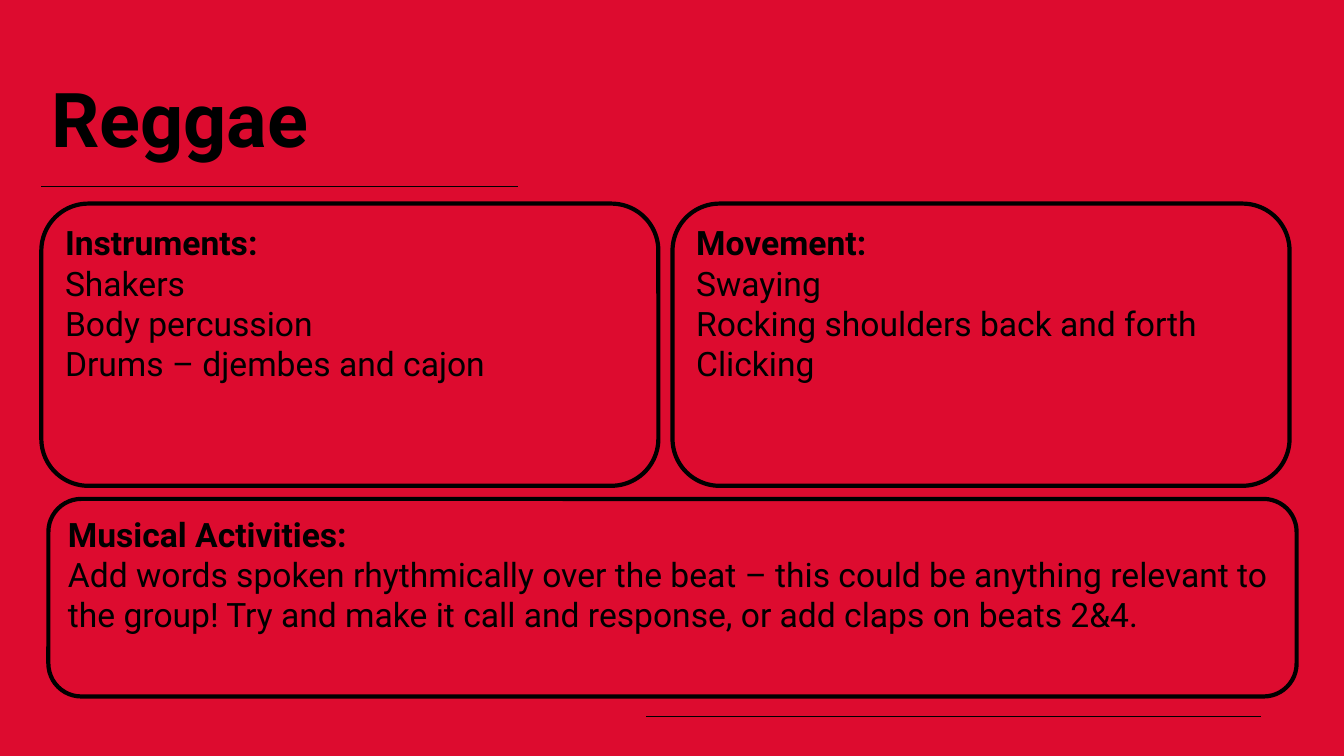
import pptx
import pptx.util
import pptx.dml.color
import pptx.enum.shapes
import pptx.enum.text
import pptx.oxml

Inches = pptx.util.Inches
COLORS = {"back": "DD0B2F", "ink": "000000"}
ANCHOR = pptx.enum.text.MSO_ANCHOR.TOP
LEFT = pptx.enum.text.PP_ALIGN.LEFT


def tint(name):
    return pptx.dml.color.RGBColor.from_string(COLORS[name])


def style(para, size, bold):
    look = {"name": "Roboto", "size": pptx.util.Pt(size), "bold": bold}
    para.alignment = LEFT
    for run in para.runs:
        for key, value in look.items():
            setattr(run.font, key, value)
        run.font.color.rgb = tint("ink")


def place(shape, *box):
    for key, value in zip(("left", "top", "width", "height"), box):
        setattr(shape, key, Inches(value))


def title(slide, text, *box):
    shape = slide.shapes.title
    place(shape, *box)
    frame = shape.text_frame
    frame.text = text
    frame.word_wrap = True
    frame.auto_size = pptx.enum.text.MSO_AUTO_SIZE.NONE
    frame.vertical_anchor = ANCHOR
    para = frame.paragraphs[0]
    para.line_spacing = 0.9
    style(para, 54, True)


def rule(slide, left, right, y):
    line = slide.shapes.add_connector(
        pptx.enum.shapes.MSO_CONNECTOR.STRAIGHT,
        Inches(left), Inches(y), Inches(right), Inches(y))
    line.line.color.rgb = tint("ink")
    line.line.width = pptx.util.Pt(1)
    line._element.spPr.append(pptx.oxml.parse_xml(
        '<a:effectLst xmlns:a="http://schemas.openxmlformats.org/drawingml/2006/main"/>'))


def panel(slide, box, head, *lines):
    shape = slide.shapes.add_shape(
        pptx.enum.shapes.MSO_SHAPE.ROUNDED_RECTANGLE, *map(Inches, box))
    shape.shadow.inherit = False
    shape.fill.background()
    shape.line.color.rgb = tint("ink")
    shape.line.width = pptx.util.Pt(3)
    frame = shape.text_frame
    frame.word_wrap = True
    frame.vertical_anchor = ANCHOR
    frame.text = "\n".join((head,) + lines)
    for index, para in enumerate(frame.paragraphs):
        style(para, 24, index == 0)


def main():
    deck = pptx.Presentation()
    deck.slide_width = Inches(13.33)
    deck.slide_height = Inches(7.5)
    slide = deck.slides.add_slide(deck.slide_layouts[5])
    slide.background.fill.solid()
    slide.background.fill.fore_color.rgb = tint("back")

    rule(slide, 6.41, 12.51, 7.11)
    rule(slide, 0.41, 5.14, 1.85)
    title(slide, "Reggae", 0.41, 0.77, 7.43, 1.26)
    panel(slide, (0.48, 4.95, 12.38, 1.96), "Musical Activities:",
          "Add words spoken rhythmically over the beat – this could be anything "
          "relevant to the group! Try and make it call and response, or add "
          "claps on beats 2&4.")
    panel(slide, (0.41, 2.02, 6.12, 2.8), "Instruments:",
          "Shakers", "Body percussion", "Drums – djembes and cajon")
    panel(slide, (6.67, 2.02, 6.12, 2.8), "Movement:",
          "Swaying", "Rocking shoulders back and forth", "Clicking")
    deck.save("out.pptx")


if __name__ == "__main__":
    main()
